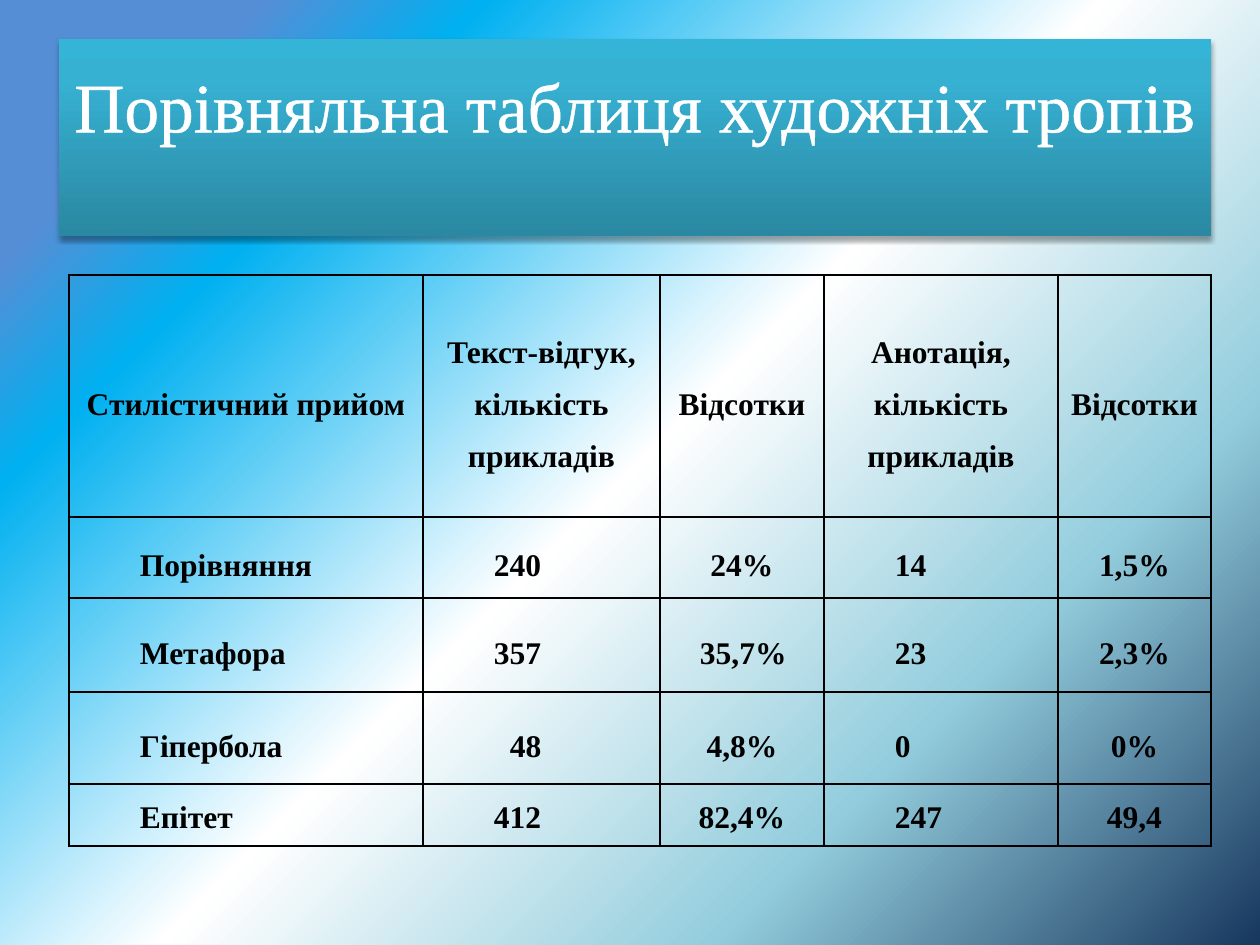
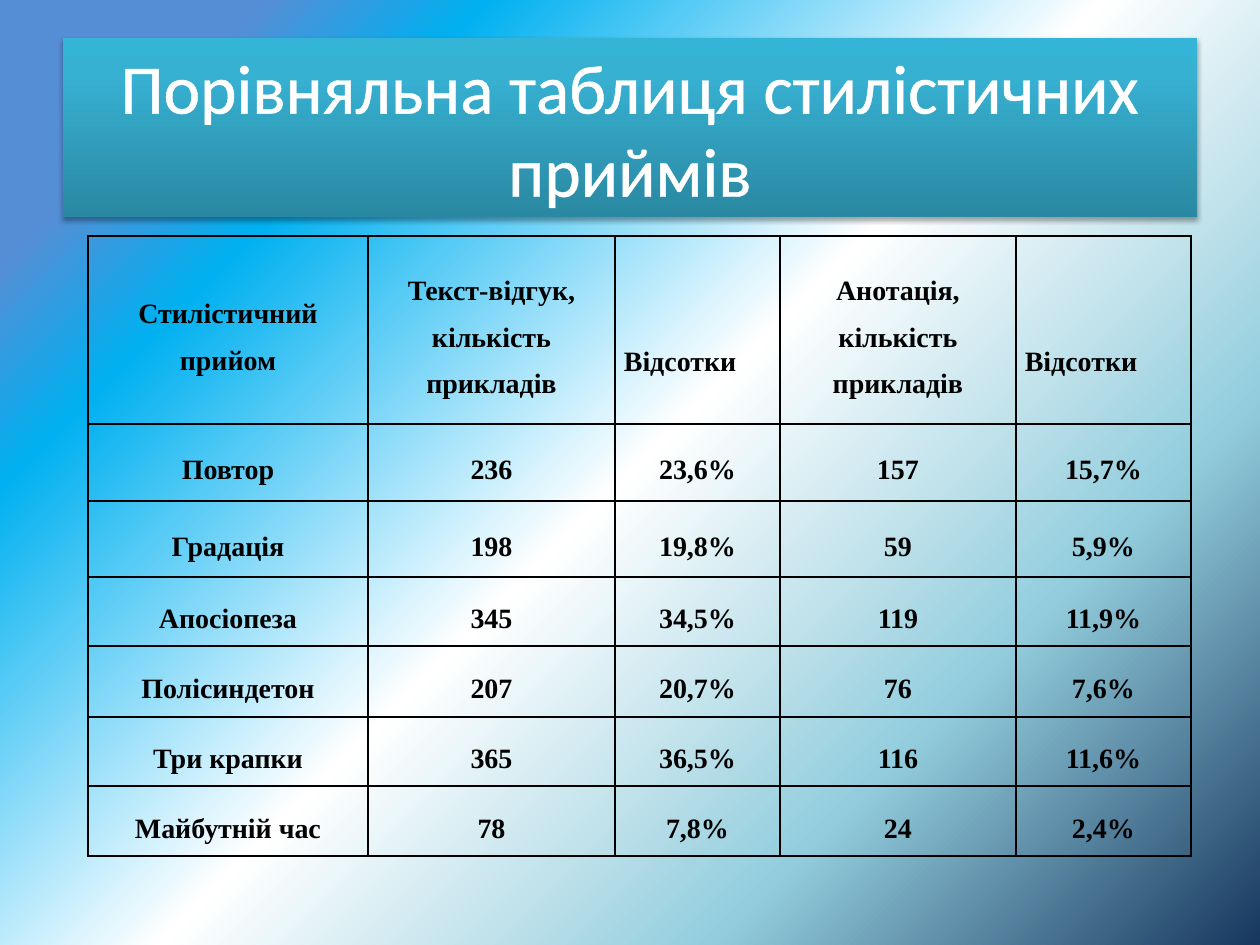
from lxml.etree import SubElement
from pptx import Presentation
from pptx.dml.color import RGBColor
from pptx.enum.shapes import MSO_SHAPE
from pptx.enum.text import MSO_ANCHOR, PP_ALIGN
from pptx.oxml import parse_xml
from pptx.oxml.ns import nsdecls, qn
from pptx.util import Emu, Pt

PX_PER_INCH = 126
SERIF = "Times New Roman"
SANS = "Calibri"

BLACK = RGBColor(0x00, 0x00, 0x00)
WHITE = RGBColor(0xFF, 0xFF, 0xFF)
NAVY = RGBColor(0x17, 0x37, 0x5E)
PALE_TEAL = RGBColor(0x93, 0xCD, 0xDD)
SKY = RGBColor(0x00, 0xB0, 0xF0)
BLUE = RGBColor(0x55, 0x8E, 0xD5)
TEAL_DARK = RGBColor(0x2A, 0x88, 0xA2)
TEAL = RGBColor(0x37, 0xB1, 0xD2)
TEAL_LIGHT = RGBColor(0x34, 0xB4, 0xD6)

PAGE_STOPS = [(0, NAVY), (25, PALE_TEAL), (50, WHITE), (78, SKY), (88, BLUE)]
BAND_STOPS = [(0, TEAL_DARK), (80, TEAL), (100, TEAL_LIGHT)]


def px(n):
    return Emu(round(n * 914400 / PX_PER_INCH))


def set_gradient(fill, element, stops, angle):
    """Fill with (percent, colour) stops; angle runs counter-clockwise."""
    fill.gradient()
    fill.gradient_angle = angle
    stop_list = next(element.iter(qn("a:gsLst")))
    stop_list.clear()
    for percent, color in stops:
        gs = SubElement(stop_list, qn("a:gs"), pos=str(percent * 1000))
        SubElement(gs, qn("a:srgbClr"), val=str(color))


def add_shadow(effects, blur, distance, angle, alpha):
    shadow = SubElement(
        effects, qn("a:outerShdw"), blurRad=str(Pt(blur)),
        dist=str(Pt(distance)), dir=str(angle * 60000), rotWithShape="0")
    color = SubElement(shadow, qn("a:srgbClr"), val=str(BLACK))
    SubElement(color, qn("a:alpha"), val=str(alpha * 1000))


def line_xml(tag, width, color):
    return parse_xml(
        f'<a:{tag} {nsdecls("a")} w="{Pt(width)}"><a:solidFill>'
        f'<a:srgbClr val="{color}"/></a:solidFill></a:{tag}>')


class Deck:
    def __init__(self):
        self.prs = Presentation()
        self.prs.slide_width, self.prs.slide_height = px(1260), px(945)
        self.s = None

    def new_slide(self):
        self.s = self.prs.slides.add_slide(self.prs.slide_layouts[6])
        set_gradient(self.s.background.fill, self.s.element, PAGE_STOPS, 135)

    def title(self, text, box, font, top_inset=None):
        """Title band; the text is centred unless a top inset is given."""
        sp = self.s.shapes.add_shape(MSO_SHAPE.RECTANGLE, *map(px, box))
        set_gradient(sp.fill, sp.element.spPr, BAND_STOPS, 90)
        sp.line.fill.background()
        sp.shadow.inherit = False
        add_shadow(sp.element.spPr.find(qn("a:effectLst")), 3.1, 1.8, 90, 35)

        tf = sp.text_frame
        tf.word_wrap = True
        tf.margin_left = tf.margin_right = px(6)
        tf.vertical_anchor = MSO_ANCHOR.MIDDLE
        if top_inset is not None:
            tf.vertical_anchor = MSO_ANCHOR.TOP
            tf.margin_top = px(top_inset)
        p = tf.paragraphs[0]
        p.alignment = PP_ALIGN.CENTER
        r = p.add_run()
        r.text = text
        r.font.size = Pt(39.6)
        r.font.color.rgb = WHITE
        r.font.name = font
        rPr = r.font._element
        rPr.insert(0, line_xml("ln", 1.45, WHITE))
        effects = parse_xml(f'<a:effectLst {nsdecls("a")}/>')
        add_shadow(effects, 5, 0, 60, 70)
        rPr.insert(2, effects)

    def table(self, left, top, widths, heights, rows, size):
        frame = self.s.shapes.add_table(
            len(rows), len(widths), px(left), px(top),
            px(sum(widths)), px(sum(heights)))
        table = frame.table
        table.first_row = table.horz_banding = False
        for column, width in zip(table.columns, widths):
            column.width = px(width)
        for row, height, texts in zip(table.rows, heights, rows):
            row.height = px(height)
            for cell, text in zip(row.cells, texts):
                self.cell(cell, text, size)
        return table

    def cell(self, cell, text, size):
        cell.text = text
        cell.vertical_anchor = MSO_ANCHOR.MIDDLE
        cell.margin_left = cell.margin_right = px(9)
        cell.margin_top = cell.margin_bottom = 0
        tcPr = cell._tc.get_or_add_tcPr()
        for side in "LRTB":
            tcPr.append(line_xml(f"ln{side}", 1, BLACK))
        cell.fill.background()
        for p in cell.text_frame.paragraphs:
            p.alignment = PP_ALIGN.CENTER
            p.line_spacing = 1.5
            p.font.size = Pt(size)
            p.font.bold = True
            p.font.name = SERIF
            p.font.color.rgb = BLACK

    def justify(self, cell, indent=0):
        p = cell.text_frame.paragraphs[0]
        p.alignment = PP_ALIGN.JUSTIFY
        pPr = p._p.get_or_add_pPr()
        pPr.set("marL", "0")
        pPr.set("indent", str(px(indent)))


def tropes_slide(deck):
    deck.new_slide()
    deck.title("Порівняльна таблиця художніх тропів",
               (59, 39, 1152, 197), SERIF, top_inset=24)
    rows = [
        ("Стилістичний прийом", "Текст-відгук,\nкількість прикладів",
         "Відсотки", "Анотація,\nкількість прикладів", "Відсотки"),
        ("Порівняння", "240", "24%", "14", "1,5%"),
        ("Метафора", "357", "35,7%", "23", "2,3%"),
        ("Гіпербола", "48", "4,8%", "0", "0%"),
        ("Епітет", "412", "82,4%", "247", "49,4"),
    ]
    table = deck.table(69, 275, (354, 237, 164, 234, 153),
                       (242, 81, 94, 92, 62), rows, 18)
    for row in range(1, len(rows)):
        for col in (0, 1, 3):
            deck.justify(table.cell(row, col), 62)
    deck.justify(table.cell(2, 2), 31)
    deck.justify(table.cell(3, 1), 78)
    for cell in table.rows[len(rows) - 1].cells:
        p = cell.text_frame.paragraphs[0]
        p.line_spacing = 1.15
        p.space_after = Pt(10)


def devices_slide(deck):
    deck.new_slide()
    deck.title("Порівняльна таблиця стилістичних приймів",
               (63, 38, 1134, 179), SANS)
    rows = [
        ("Стилістичний прийом", "Текст-відгук, кількість прикладів",
         "Відсотки", "Анотація, кількість прикладів", "Відсотки"),
        ("Повтор", "236", "23,6%", "157", "15,7%"),
        ("Градація", "198", "19,8%", "59", "5,9%"),
        ("Апосіопеза", "345", "34,5%", "119", "11,9%"),
        ("Полісиндетон", "207", "20,7%", "76", "7,6%"),
        ("Три крапки", "365", "36,5%", "116", "11,6%"),
        ("Майбутній час", "78", "7,8%", "24", "2,4%"),
    ]
    table = deck.table(88, 236, (280, 247, 165, 236, 175),
                       (188, 77, 76, 69, 71, 69, 70), rows, 16)
    for col in (2, 4):
        percent_header = table.cell(0, col)
        deck.justify(percent_header)
        percent_header.margin_top = px(48)


def main():
    deck = Deck()
    tropes_slide(deck)
    devices_slide(deck)
    deck.prs.save("out.pptx")


if __name__ == "__main__":
    main()
